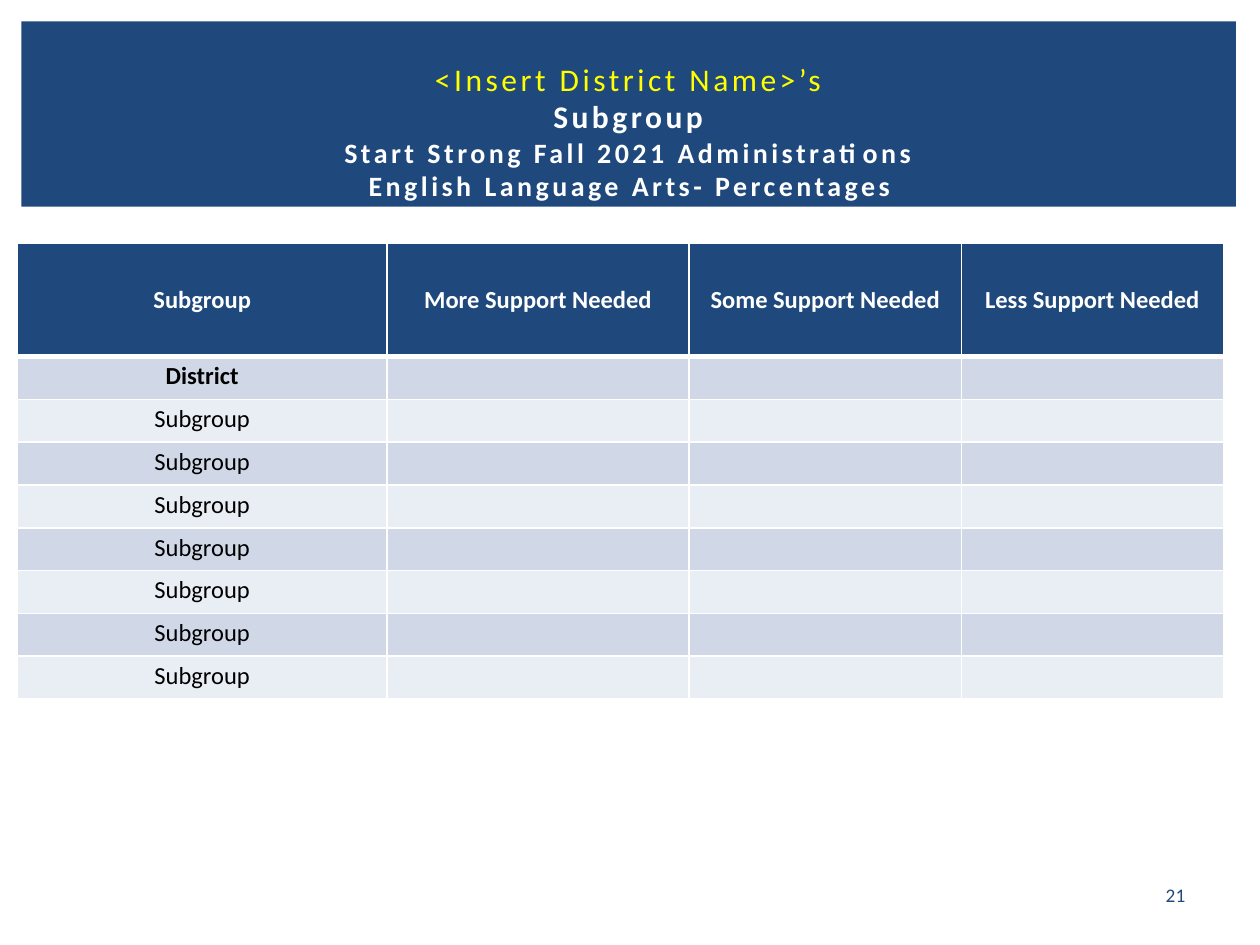
import pptx
import pptx.util
import pptx.dml.color
import pptx.enum.shapes
import pptx.enum.text
import pptx.oxml.ns
import lxml.etree
from dataclasses import dataclass

Inches = pptx.util.Inches
Pt = pptx.util.Pt
MID = pptx.enum.text.MSO_ANCHOR.MIDDLE
TOP = pptx.enum.text.MSO_ANCHOR.TOP


@dataclass(frozen=True)
class Theme:
    font: str = "Calibri"
    navy: str = "1F497D"
    white: str = "FFFFFF"
    black: str = "000000"
    yellow: str = "FFFF00"
    bands: tuple = ("D0D8E8", "E9EDF4")
    head: int = 18
    sub: int = 16
    cell: int = 14
    page: int = 11
    track: int = 2


def rgb(code):
    return pptx.dml.color.RGBColor.from_string(code)


def box(nums):
    return [Inches(n) for n in nums]


def node(parent, tag, **attrs):
    return lxml.etree.SubElement(parent, pptx.oxml.ns.qn(tag), attrs)


class Deck:
    def __init__(self, theme):
        self.theme = theme
        self.file = pptx.Presentation()
        self.file.slide_width = Inches(10)
        self.file.slide_height = Inches(7.5)
        self.slide = self.file.slides.add_slide(self.file.slide_layouts[5])

    def style(self, run, size, color, bold=False):
        run.font.name = self.theme.font
        run.font.size = Pt(size)
        run.font.bold = bold
        run.font.color.rgb = rgb(color)

    def center(self, para):
        para.alignment = pptx.enum.text.PP_ALIGN.CENTER

    def band(self, place):
        kind = pptx.enum.shapes.MSO_SHAPE.RECTANGLE
        shape = self.slide.shapes.add_shape(kind, *box(place))
        shape.shadow.inherit = False
        shape.fill.solid()
        shape.fill.fore_color.rgb = rgb(self.theme.navy)
        shape.line.fill.background()
        # The band sits behind the title
        self.slide.shapes.title.element.addprevious(shape.element)

    def title(self, place, lines):
        """Each line is (text, size, color, bold)."""
        shape = self.slide.shapes.title
        shape.left, shape.top, shape.width, shape.height = box(place)
        frame = shape.text_frame
        frame.auto_size = pptx.enum.text.MSO_AUTO_SIZE.NONE
        frame.vertical_anchor = MID
        para = frame.paragraphs[0]
        para.text = "\v".join(line[0] for line in lines)
        self.center(para)
        for run, (_, size, color, bold) in zip(para.runs, lines):
            self.style(run, size, color, bold)
            run.font._element.set("spc", str(self.theme.track * 100))

    def label(self, place, text, size, color):
        frame = self.slide.shapes.add_textbox(*box(place)).text_frame
        frame.word_wrap = True
        frame.vertical_anchor = MID
        para = frame.paragraphs[0]
        para.text = text
        self.center(para)
        self.style(para.runs[0], size, color)

    def edge(self, cell, **widths):
        props = cell._tc.get_or_add_tcPr()
        for side in "LRTB":
            line = node(props, f"a:ln{side}", w=str(Pt(widths.get(side, 1))))
            node(node(line, "a:solidFill"), "a:srgbClr", val=self.theme.white)

    def cell(self, cell, text, row, bold):
        look = self.theme
        head = row == 0
        self.edge(cell, **({"B": 3} if head else {"T": 3} if row == 1 else {}))
        cell.fill.solid()
        cell.fill.fore_color.rgb = rgb(look.navy if head else look.bands[(row - 1) % 2])
        cell.margin_left = cell.margin_right = Inches(0.07)
        cell.margin_top = cell.margin_bottom = Inches(0.04)
        cell.vertical_anchor = MID if head else TOP
        para = cell.text_frame.paragraphs[0]
        self.center(para)
        if text:
            para.text = text
            self.style(para.runs[0], look.cell, look.white if head else look.black, bold)
        else:
            # Keeps an empty cell from stretching its row
            node(para._p, "a:endParaRPr", sz=str(look.cell * 100))

    def table(self, left, top, cols, highs, rows):
        place = box((left, top, sum(cols), sum(highs)))
        grid = self.slide.shapes.add_table(len(rows), len(cols), *place).table
        for col, wide in zip(grid.columns, cols):
            col.width = Inches(wide)
        for num, (high, texts) in enumerate(zip(highs, rows)):
            grid.rows[num].height = Inches(high)
            for cell, text in zip(grid.rows[num].cells, texts):
                self.cell(cell, text, num, bold=num < 2)


def main():
    theme = Theme()
    deck = Deck(theme)

    # Heading on its band
    deck.band((0.17, 0.17, 9.64, 1.47))
    deck.title((1.46, 0.53, 7.08, 1.02), [
        ("<Insert District Name>’s", theme.head, theme.yellow, False),
        ("Subgroup", theme.head, theme.white, True),
        ("Start Strong Fall 2021 Administrations", theme.sub, theme.white, True),
        ("English Language Arts- Percentages", theme.sub, theme.white, True),
    ])

    # Support levels by subgroup, values left open
    levels = [f"{word} Support Needed" for word in ("More", "Some", "Less")]
    names = ["District"] + ["Subgroup"] * 7
    rows = [["Subgroup"] + levels] + [[name, "", "", ""] for name in names]
    highs = [0.9] + [0.34] * len(names)
    deck.table(0.14, 1.93, (2.93, 2.4, 2.16, 2.08), highs, rows)

    # Page number
    deck.label((9.01, 6.95, 0.64, 0.3), "21", theme.page, theme.navy)

    deck.file.save("out.pptx")


if __name__ == "__main__":
    main()
